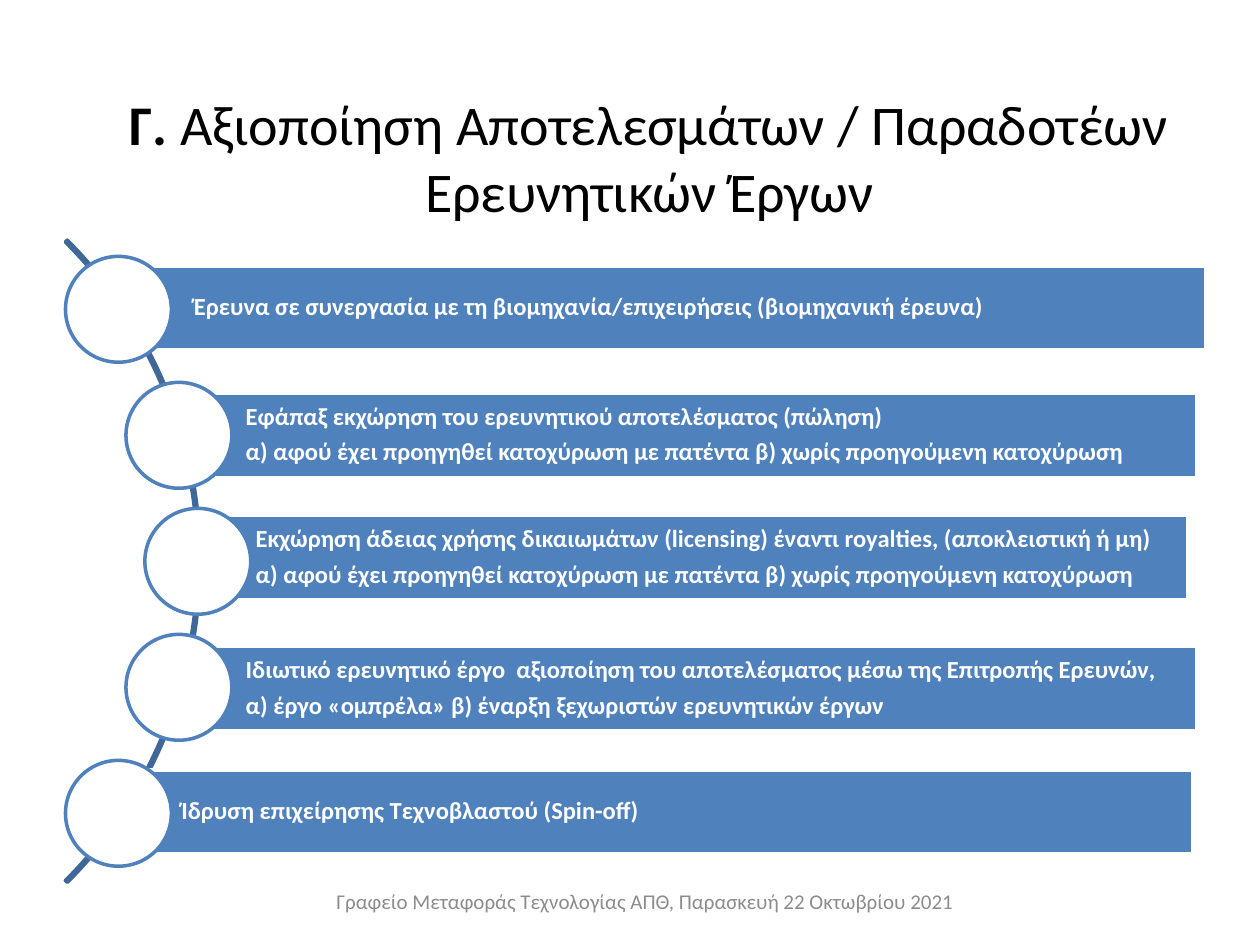
from dataclasses import dataclass

import pptx
import pptx.dml.color
import pptx.enum.shapes
import pptx.enum.text
import pptx.util

Inches = pptx.util.Inches
Shapes = pptx.enum.shapes.MSO_SHAPE
Align = pptx.enum.text.PP_ALIGN


@dataclass(frozen=True)
class Theme:
    font: str = "Calibri"
    accent: str = "4F81BD"
    arc: str = "3F6797"
    white: str = "FFFFFF"
    black: str = "000000"
    grey: str = "8C8C8C"
    title_size: int = 32
    bar_size: int = 14
    footer_size: int = 12
    line_width: int = 2


class SlideBuilder:
    """Draws the elements of one slide in a single theme."""

    def __init__(self, slide, theme):
        self.slide = slide
        self.theme = theme

    def color(self, value):
        return pptx.dml.color.RGBColor.from_string(value)

    def add_run(self, paragraph, text, size, color, bold=False):
        run = paragraph.add_run()
        run.text = text
        run.font.name = self.theme.font
        run.font.size = pptx.util.Pt(size)
        run.font.bold = bold
        run.font.color.rgb = self.color(color)

    def prepare_frame(self, shape):
        frame = shape.text_frame
        frame.word_wrap = True
        frame.auto_size = pptx.enum.text.MSO_AUTO_SIZE.NONE
        frame.vertical_anchor = pptx.enum.text.MSO_ANCHOR.MIDDLE
        return frame

    def add_title(self, left, top, width, height, runs):
        title = self.slide.shapes.title
        title.left, title.top = Inches(left), Inches(top)
        title.width, title.height = Inches(width), Inches(height)
        paragraph = self.prepare_frame(title).paragraphs[0]
        paragraph.alignment = Align.CENTER
        for text, bold in runs:
            self.add_run(paragraph, text, self.theme.title_size, self.theme.black, bold)

    def add_shape(self, kind, left, top, width, height, fill, line):
        shape = self.slide.shapes.add_shape(
            kind, Inches(left), Inches(top), Inches(width), Inches(height)
        )
        shape.shadow.inherit = False
        if fill:
            shape.fill.solid()
            shape.fill.fore_color.rgb = self.color(fill)
        else:
            shape.fill.background()
        shape.line.color.rgb = self.color(line)
        shape.line.width = pptx.util.Pt(self.theme.line_width)
        return shape

    def add_arc(self, left, top, size):
        arc = self.add_shape(Shapes.BLOCK_ARC, left, top, size, size, None, self.theme.arc)
        for index, value in enumerate((189, 27, 0.003)):
            arc.adjustments[index] = value

    def add_bar(self, left, top, width, height, lines):
        bar = self.add_shape(
            Shapes.RECTANGLE, left, top, width, height, self.theme.accent, self.theme.white
        )
        frame = self.prepare_frame(bar)
        frame.margin_left = Inches(0.53)
        frame.margin_top = frame.margin_right = frame.margin_bottom = Inches(0.04)
        for index, text in enumerate(lines):
            paragraph = frame.add_paragraph() if index else frame.paragraphs[0]
            paragraph.alignment = Align.LEFT
            paragraph.line_spacing = 0.9
            paragraph.space_after = pptx.util.Pt(0.35 * self.theme.bar_size)
            self.add_run(paragraph, text, self.theme.bar_size, self.theme.white, True)

    def add_circle(self, left, top, size):
        self.add_shape(
            Shapes.OVAL, left, top, size, size, self.theme.white, self.theme.accent
        )

    def add_footer(self, left, top, width, height, text):
        box = self.slide.shapes.add_textbox(
            Inches(left), Inches(top), Inches(width), Inches(height)
        )
        paragraph = self.prepare_frame(box).paragraphs[0]
        paragraph.alignment = Align.CENTER
        self.add_run(paragraph, text, self.theme.footer_size, self.theme.grey)


PATENT_OPTIONS = (
    "α) αφού έχει προηγηθεί κατοχύρωση με πατέντα β) χωρίς προηγούμενη κατοχύρωση"
)
ROUTES = [
    (0.52, 1.01, 2.11, 8.56, [
        "Έρευνα σε συνεργασία με τη βιομηχανία/επιχειρήσεις (βιομηχανική έρευνα)",
    ]),
    (1.0, 1.42, 3.12, 8.08, [
        "Εφάπαξ εκχώρηση του ερευνητικού αποτελέσματος (πώληση)",
        PATENT_OPTIONS,
    ]),
    (1.15, 1.5, 4.09, 7.93, [
        "Εκχώρηση άδειας χρήσης δικαιωμάτων (licensing) έναντι royalties, (αποκλειστική ή μη)",
        PATENT_OPTIONS,
    ]),
    (1.0, 1.42, 5.13, 8.08, [
        "Ιδιωτικό ερευνητικό έργο  αξιοποίηση του αποτελέσματος μέσω της Επιτροπής Ερευνών,",
        "α) έργο «ομπρέλα» β) έναρξη ξεχωριστών ερευνητικών έργων",
    ]),
    (0.52, 0.91, 6.11, 8.56, ["Ίδρυση επιχείρησης Τεχνοβλαστού (Spin-off)"]),
]
BAR_HEIGHT = 0.67
CIRCLE_SIZE = 0.84
ARC_TOP, ARC_SIZE = 0.85, 7.21
CIRCLE_PITCH = 1.0


def main():
    presentation = pptx.Presentation()
    presentation.slide_width = Inches(10)
    presentation.slide_height = Inches(7.5)
    slide = presentation.slides.add_slide(presentation.slide_layouts[5])
    builder = SlideBuilder(slide, Theme())

    builder.add_title(0.51, 0.92, 9.29, 0.64, [
        ("Γ. ", True),
        ("Αξιοποίηση Αποτελεσμάτων / Παραδοτέων Ερευνητικών Έργων", False),
    ])
    builder.add_arc(-5.62, ARC_TOP, ARC_SIZE)
    middle_top = ARC_TOP + (ARC_SIZE - CIRCLE_SIZE) / 2
    for index, (circle_left, bar_left, bar_top, bar_width, lines) in enumerate(ROUTES):
        circle_top = middle_top + (index - len(ROUTES) // 2) * CIRCLE_PITCH
        builder.add_bar(bar_left, bar_top, bar_width, BAR_HEIGHT, lines)
        builder.add_circle(circle_left, circle_top, CIRCLE_SIZE)
    builder.add_footer(
        0.83, 6.95, 8.58, 0.4,
        "Γραφείο Μεταφοράς Τεχνολογίας ΑΠΘ, Παρασκευή 22 Οκτωβρίου 2021",
    )
    presentation.save("out.pptx")


if __name__ == "__main__":
    main()
